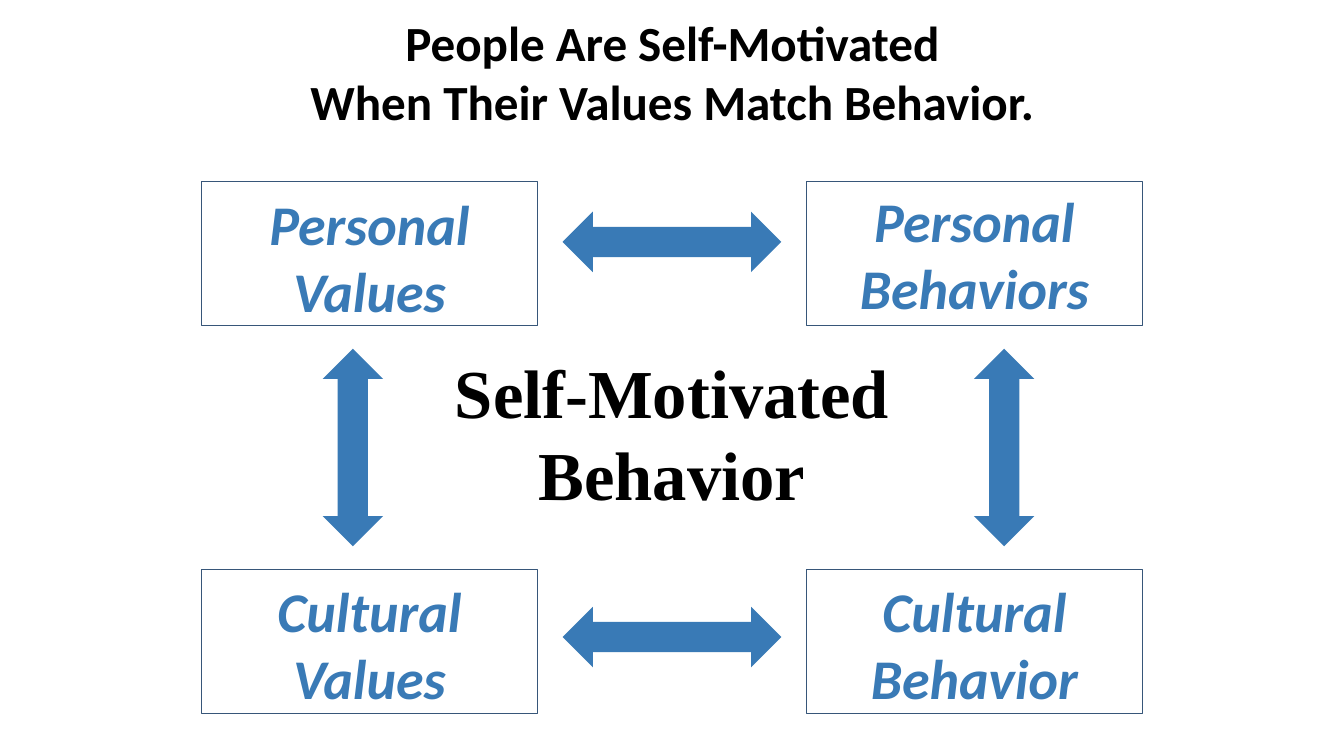
from dataclasses import dataclass

from pptx import Presentation
from pptx import util as u
from pptx.dml.color import RGBColor
from pptx.enum import shapes, text

TITLE = "People Are Self-Motivated\vWhen Their Values Match Behavior."
CENTER = "Self-Motivated Behavior"
# label, column, row, drop of the text below the top of its box
BOXES = [
    ("Personal Values", 0, 0, 0.03),
    ("Personal Behaviors", 1, 0, 0),
    ("Cultural Values", 0, 1, 0.02),
    ("Cultural Behavior", 1, 1, 0.02),
]


@dataclass(frozen=True)
class Theme:
    black: str = "000000"
    white: str = "FFFFFF"
    blue: str = "397AB6"
    outline: str = "375679"
    sans: str = "Calibri"
    serif: str = "Times New Roman"
    title_size: float = 35.1
    label_size: float = 40
    center_size: float = 49


THEME = Theme()
WIDTH, HEIGHT = 13.33, 7.5
COLUMNS, ROWS = (2, 8), (1.8, 5.65)
BOX_WIDTH, BOX_HEIGHT = 3.33, 1.43
ARROW_THICKNESS, ACROSS_LENGTH, DOWN_LENGTH = 0.6, 2.17, 1.96
ACROSS_CENTERS = (2.4, 6.32)
DOWN_CENTERS = (3.5, 9.96)


def inches(*lengths):
    return [u.Inches(length) for length in lengths]


def write(shape, words, font_name, size, color, italic=False):
    """Fill a shape with centred bold text."""
    frame = shape.text_frame
    frame.word_wrap = True
    frame.text = words
    paragraph = frame.paragraphs[0]
    paragraph.alignment = text.PP_ALIGN.CENTER
    for run in paragraph.runs:
        run.font.name, run.font.size = font_name, u.Pt(size)
        run.font.bold, run.font.italic = True, italic
        run.font.color.rgb = RGBColor.from_string(color)
    return frame


def add_filled(slide, kind, place, fill, outline=None):
    shape = slide.shapes.add_shape(kind, *inches(*place))
    shape.shadow.inherit = False
    shape.fill.solid()
    shape.fill.fore_color.rgb = RGBColor.from_string(fill)
    if outline:
        shape.line.color.rgb = RGBColor.from_string(outline)
        shape.line.width = u.Pt(0.75)
    else:
        shape.line.fill.background()
    return shape


def add_title(slide):
    title = slide.shapes.title
    title.left, title.top, title.width, title.height = inches(2.21, 0.08, 8.92, 1.25)
    frame = write(title, TITLE, THEME.sans, THEME.title_size, THEME.black)
    frame.auto_size = text.MSO_AUTO_SIZE.NONE
    frame.vertical_anchor = text.MSO_ANCHOR.MIDDLE


def add_boxes(slide):
    for label, column, row, drop in BOXES:
        place = (COLUMNS[column], ROWS[row], BOX_WIDTH, BOX_HEIGHT)
        box = add_filled(slide, shapes.MSO_SHAPE.RECTANGLE, place, THEME.white, THEME.outline)
        frame = write(box, label, THEME.sans, THEME.label_size, THEME.blue, italic=True)
        frame.vertical_anchor = text.MSO_ANCHOR.TOP
        frame.margin_top, frame.margin_bottom = inches(0.05 + drop, 0)


def add_arrows(slide):
    middle_x = (COLUMNS[0] + COLUMNS[1] + BOX_WIDTH) / 2
    middle_y = (ROWS[0] + ROWS[1] + BOX_HEIGHT) / 2
    across = (shapes.MSO_SHAPE.LEFT_RIGHT_ARROW, ACROSS_LENGTH, ARROW_THICKNESS)
    down = (shapes.MSO_SHAPE.UP_DOWN_ARROW, ARROW_THICKNESS, DOWN_LENGTH)
    arrows = [(middle_x, y, *across) for y in ACROSS_CENTERS]
    arrows += [(x, middle_y, *down) for x in DOWN_CENTERS]
    for x, y, kind, width, height in arrows:
        place = (x - width / 2, y - height / 2, width, height)
        add_filled(slide, kind, place, THEME.blue)


def main():
    presentation = Presentation()
    presentation.slide_width, presentation.slide_height = inches(WIDTH, HEIGHT)
    slide = presentation.slides.add_slide(presentation.slide_layouts[5])
    add_title(slide)
    add_boxes(slide)
    center = slide.shapes.add_textbox(*inches(4, 3.42, 5.33, 1.75))
    write(center, CENTER, THEME.serif, THEME.center_size, THEME.black)
    add_arrows(slide)
    presentation.save("out.pptx")


if __name__ == "__main__":
    main()
